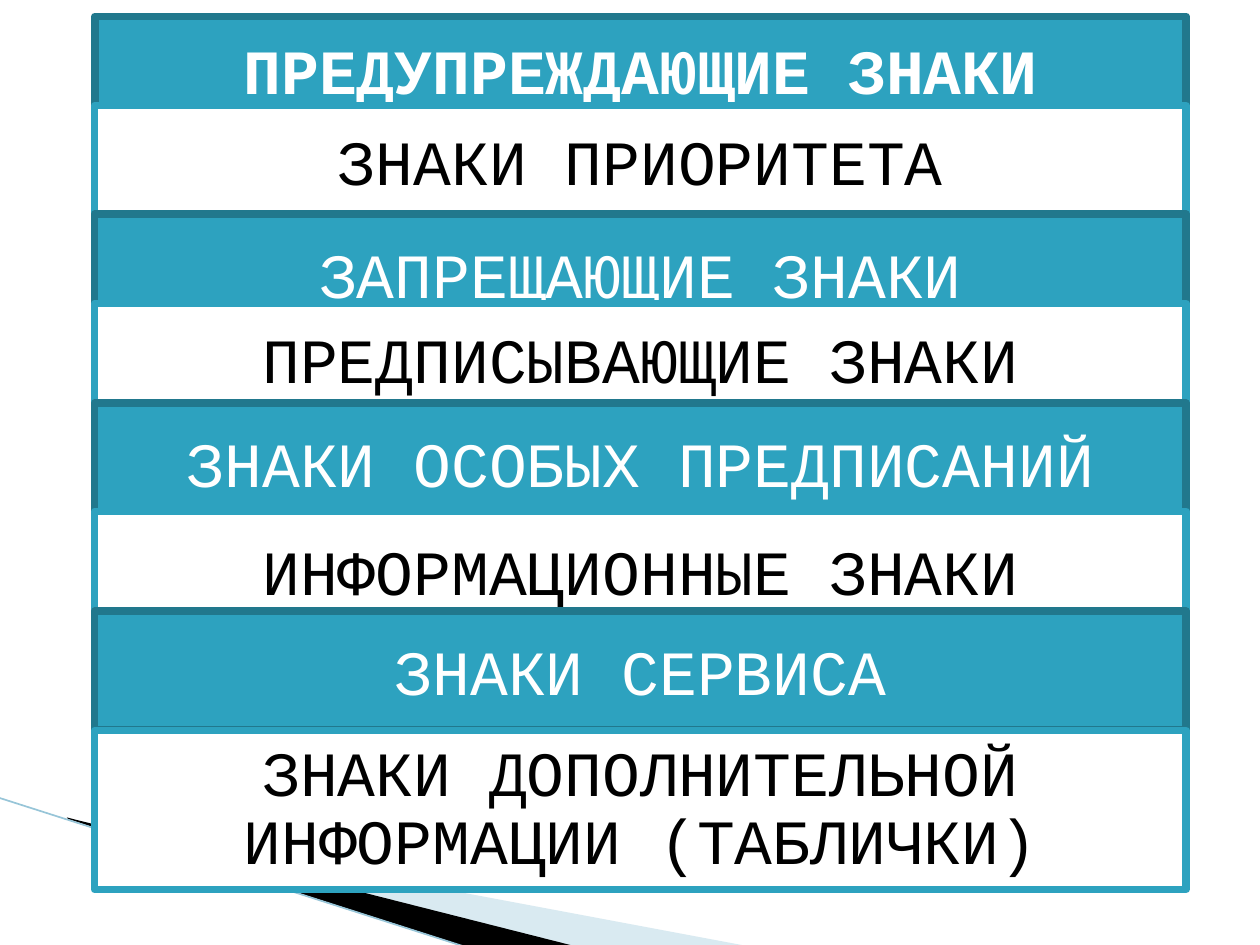
import pptx
import pptx.util
import pptx.dml.color
import pptx.enum.shapes
import pptx.enum.text
import pptx.oxml
import pptx.oxml.ns
from pptx.util import Cm

RGBColor = pptx.dml.color.RGBColor
TEAL = RGBColor(0x2D, 0xA2, 0xBF)
DARK_TEAL = RGBColor(0x21, 0x78, 0x8D)
PALE_BLUE = RGBColor(0xA0, 0xCB, 0xDC)
LINE_BLUE = RGBColor(0x97, 0xC5, 0xD8)
WHITE = RGBColor(0xFF, 0xFF, 0xFF)
BLACK = RGBColor(0, 0, 0)

LEFT, WIDTH = 1.91, 22
# text, top and height in centimetres
BANDS = [
    ("ПРЕДУПРЕЖДАЮЩИЕ ЗНАКИ", 0.33, 2.13),
    ("ЗНАКИ ПРИОРИТЕТА", 2.13, 2.21),
    ("ЗАПРЕЩАЮЩИЕ ЗНАКИ", 4.32, 2.39),
    ("ПРЕДПИСЫВАЮЩИЕ ЗНАКИ", 6.12, 2.21),
    ("ЗНАКИ ОСОБЫХ ПРЕДПИСАНИЙ", 8.13, 2.39),
    ("ИНФОРМАЦИОННЫЕ ЗНАКИ", 10.31, 2.39),
    ("ЗНАКИ СЕРВИСА", 12.32, 2.39),
    ("ЗНАКИ ДОПОЛНИТЕЛЬНОЙ ИНФОРМАЦИИ (ТАБЛИЧКИ)", 14.73, 3.2),
]


def add_wedge(slide, points, color):
    """Add a filled, unoutlined polygon with corners in centimetres."""
    corners = [(Cm(x), Cm(y)) for x, y in points]
    builder = slide.shapes.build_freeform(*corners[0])
    builder.add_line_segments(corners[1:], close=True)
    wedge = builder.convert_to_shape()
    wedge.shadow.inherit = False
    wedge.fill.solid()
    wedge.fill.fore_color.rgb = color
    wedge.line.fill.background()
    return wedge


presentation = pptx.Presentation()
presentation.slide_width = Cm(25.4)
presentation.slide_height = Cm(19.05)
slide = presentation.slides.add_slide(presentation.slide_layouts[5])
title = slide.shapes.title

# Corner decoration
pale_wedge = add_wedge(slide, [(1.4, 16.51), (15.11, 19.08), (11.58, 19.08)], PALE_BLUE)
color_element = pale_wedge.fill._xPr.find(".//" + pptx.oxml.ns.qn("a:srgbClr"))
color_element.append(pptx.oxml.parse_xml(
    f'<a:alpha {pptx.oxml.ns.nsdecls("a")} val="40000"/>'))
add_wedge(slide, [(1.35, 16.48), (11.61, 19.08), (9.45, 19.1), (1.37, 16.51)], BLACK)
edge = slide.shapes.add_connector(
    pptx.enum.shapes.MSO_CONNECTOR.STRAIGHT, Cm(-0.03), Cm(16.08), Cm(9.42), Cm(19.1))
edge.line.color.rgb = LINE_BLUE
edge.line.width = pptx.util.Pt(0.95)
edge._element.spPr.append(pptx.oxml.parse_xml(
    f'<a:effectLst {pptx.oxml.ns.nsdecls("a")}/>'))

# The title lies above the decoration and below the other bands
slide.shapes._spTree.append(title._element)

# Overlapping bands, alternately teal and white
for index, (text, top, height) in enumerate(BANDS):
    box = (Cm(LEFT), Cm(top), Cm(WIDTH), Cm(height))
    if index == 0:
        band = title
        band.left, band.top, band.width, band.height = box
    else:
        band = slide.shapes.add_shape(pptx.enum.shapes.MSO_SHAPE.RECTANGLE, *box)
        band.shadow.inherit = False
    is_teal = index % 2 == 0
    band.fill.solid()
    band.fill.fore_color.rgb = TEAL if is_teal else WHITE
    band.line.color.rgb = DARK_TEAL if is_teal else TEAL
    band.line.width = pptx.util.Pt(4.33)

    text_frame = band.text_frame
    text_frame.text = text
    text_frame.word_wrap = True
    text_frame.auto_size = pptx.enum.text.MSO_AUTO_SIZE.NONE
    text_frame.vertical_anchor = pptx.enum.text.MSO_ANCHOR.MIDDLE
    paragraph = text_frame.paragraphs[0]
    paragraph.alignment = pptx.enum.text.PP_ALIGN.CENTER
    if index == len(BANDS) - 1:
        paragraph.line_spacing = 0.9
    font = paragraph.runs[0].font
    font.name = "Courier New"
    font.size = pptx.util.Pt(36)
    font.bold = index == 0
    font.color.rgb = WHITE if is_teal else BLACK

presentation.save("out.pptx")
